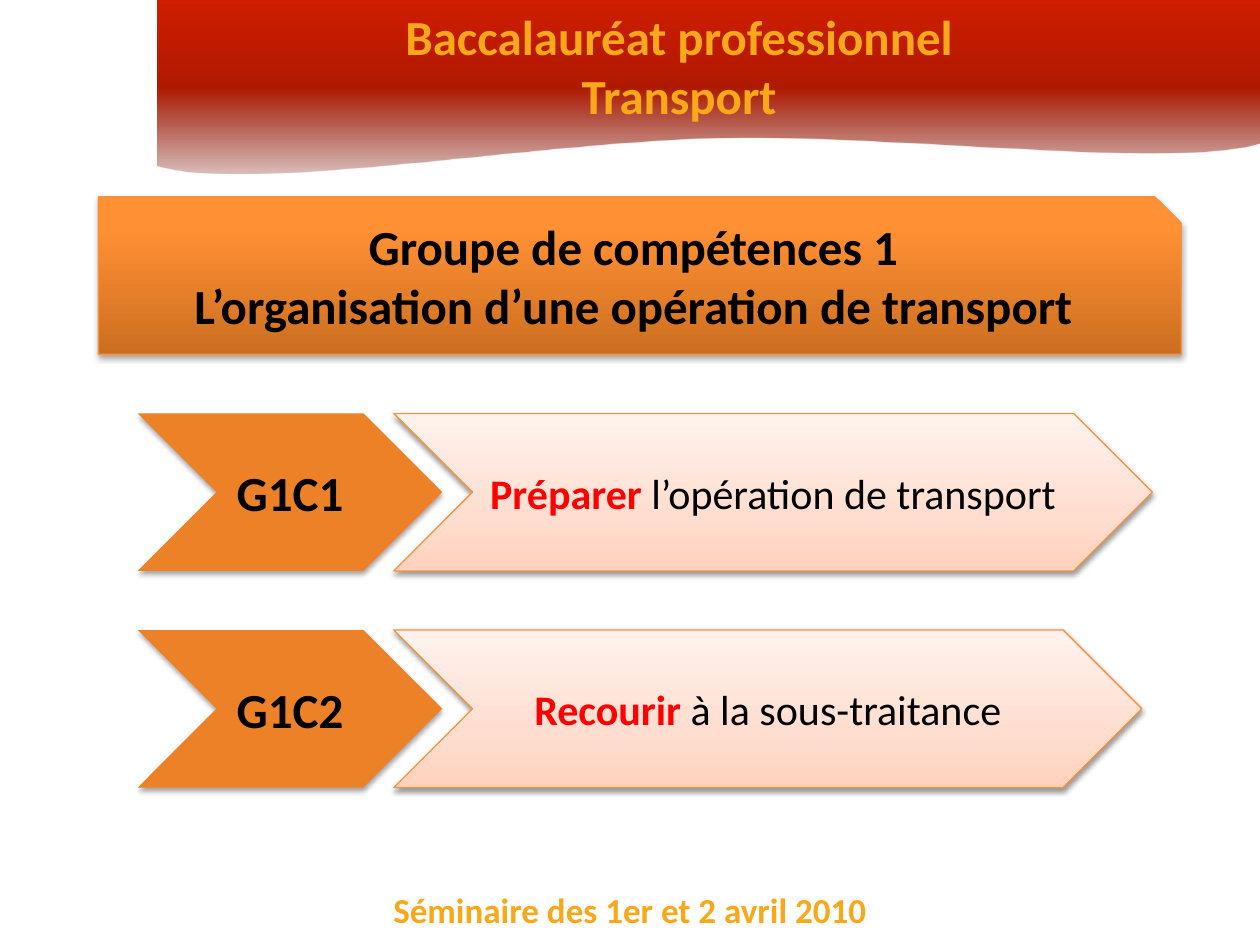
import pptx
import pptx.util
import pptx.dml.color
import pptx.enum.shapes
import pptx.enum.text
from lxml import etree

Pt = pptx.util.Pt
Shape = pptx.enum.shapes.MSO_SHAPE
Anchor = pptx.enum.text.MSO_ANCHOR
NAMESPACE = "http://schemas.openxmlformats.org/drawingml/2006/main"

# Content: each line is a list of (text, colour, bold) runs
GOLD, BLACK, RED, ORANGE, EDGE = "F8A818", "000000", "FF0000", "ED8127", "F69240"
HEADER = [[("Baccalauréat professionnel", GOLD, True)], [("Transport", GOLD, True)]]
FOOTER = [[("Séminaire des 1er et 2 avril 2010", GOLD, True)]]
BANNER = [
    [("Groupe de compétences 1", BLACK, True)],
    [("L’organisation d’une opération de transport", BLACK, True)],
]
SKILLS = [  # code, verb, rest of the sentence, arrow width
    ("G1C1", "Préparer", " l’opération de transport", 433.5),
    ("G1C2", "Recourir", " à la sous-traitance", 427.5),
]

# Gradients run from bottom to top: (position %, colour, opacity %)
WAVE_STOPS = [(0, "7B1100", 27), (50, "AF1900", 100), (100, "D01D00", 100)]
BANNER_STOPS = [(0, "CC6E20", 100), (80, "FF9034", 100), (100, "FF9136", 100)]
ARROW_STOPS = [(0, "FFD2BD", 100), (35, "FFDED0", 100), (100, "FFF2ED", 100)]

# Lower edge of the wave: start point, then Bézier segments
WAVE_START = (720, 81.5)
WAVE_CURVES = [
    ((669, 96.5), (515.5, 76.3), (410.5, 78.5)),
    ((305.5, 80.6), (143, 110.2), (90, 94.3)),
]


def colour(value):
    return pptx.dml.color.RGBColor.from_string(value)


def write(shape, lines, size, anchor):
    frame = shape.text_frame
    frame.word_wrap = True
    frame.auto_size = pptx.enum.text.MSO_AUTO_SIZE.NONE
    frame.vertical_anchor = anchor
    frame.text = "\n".join("" for _ in lines)
    for paragraph, runs in zip(frame.paragraphs, lines):
        paragraph.alignment = pptx.enum.text.PP_ALIGN.CENTER
        for text, run_colour, bold in runs:
            run = paragraph.add_run()
            run.text = text
            run.font.name = "Calibri"
            run.font.size = Pt(size)
            run.font.bold = bold
            run.font.color.rgb = colour(run_colour)


def add_gradient(shape, stops):
    shape.fill.background()
    properties = shape.fill._xPr
    stop_xml = "".join(
        f'<a:gs pos="{position * 1000}"><a:srgbClr val="{value}">'
        f'<a:alpha val="{opacity * 1000}"/></a:srgbClr></a:gs>'
        for position, value, opacity in stops
    )
    gradient = etree.fromstring(
        f'<a:gradFill xmlns:a="{NAMESPACE}" rotWithShape="1"><a:gsLst>{stop_xml}</a:gsLst>'
        '<a:lin ang="16200000" scaled="0"/></a:gradFill>'
    )
    properties.replace(properties.find(f"{{{NAMESPACE}}}noFill"), gradient)


def add_shadow(shape, opacity, distance):
    shape.shadow.inherit = False
    effects = shape._element.spPr.find(f"{{{NAMESPACE}}}effectLst")
    effects.append(etree.fromstring(
        f'<a:outerShdw xmlns:a="{NAMESPACE}" blurRad="{Pt(3.1)}" dist="{Pt(distance)}" '
        'dir="5400000" rotWithShape="0"><a:srgbClr val="000000">'
        f'<a:alpha val="{opacity * 1000}"/></a:srgbClr></a:outerShdw>'
    ))


def add_block(slide, kind, box, fill, lines, size, anchor, shadow):
    shape = slide.shapes.add_shape(kind, *map(Pt, box))
    if isinstance(fill, str):
        shape.fill.solid()
        shape.fill.fore_color.rgb = colour(fill)
        shape.line.fill.background()
    else:
        add_gradient(shape, fill)
        shape.line.color.rgb = colour(EDGE)
        shape.line.width = Pt(0.75)
    add_shadow(shape, *shadow)
    write(shape, lines, size, anchor)


def wave_points(steps=24):
    points, start = [WAVE_START], WAVE_START
    for first, second, end in WAVE_CURVES:
        for step in range(1, steps + 1):
            t = step / steps
            points.append(tuple(
                (1 - t) ** 3 * a + 3 * (1 - t) ** 2 * t * b + 3 * (1 - t) * t ** 2 * c + t ** 3 * d
                for a, b, c, d in zip(start, first, second, end)
            ))
        start = end
    return points


def main():
    presentation = pptx.Presentation()
    presentation.slide_width, presentation.slide_height = Pt(720), Pt(540)
    slide = presentation.slides.add_slide(presentation.slide_layouts[5])

    # Footer and red wave, placed behind the title
    footer = slide.shapes.add_textbox(Pt(180), Pt(504), Pt(360), Pt(31.5))
    write(footer, FOOTER, 20, Anchor.TOP)
    builder = slide.shapes.build_freeform(Pt(90), 0)
    outline = [(720, 0)] + wave_points()
    builder.add_line_segments([(Pt(x), Pt(y)) for x, y in outline], close=True)
    wave = builder.convert_to_shape()
    wave.shadow.inherit = False
    wave.line.fill.background()
    add_gradient(wave, WAVE_STOPS)

    # Title
    title = slide.shapes.title
    title.left, title.top, title.width, title.height = Pt(208), Pt(0), Pt(360), Pt(75)
    write(title, HEADER, 28, Anchor.TOP)
    wave._element.addnext(title._element)

    # Banner
    add_block(slide, Shape.SNIP_1_RECTANGLE, (56.25, 112.5, 618.75, 90), BANNER_STOPS,
              BANNER, 28, Anchor.TOP, (35, 1.8))

    # Skill rows: code chevron and description arrow
    for row, (code, verb, rest, width) in enumerate(SKILLS):
        top = 236.25 + row * 123.75
        add_block(slide, Shape.CHEVRON, (78.75, top, 174, 90), ORANGE,
                  [[(code, BLACK, True)]], 28, Anchor.MIDDLE, (35, 1.8))
        add_block(slide, Shape.CHEVRON, (225, top, width, 90), ARROW_STOPS,
                  [[(verb, RED, True), (rest, BLACK, False)]], 24, Anchor.MIDDLE, (38, 1.6))

    presentation.save("out.pptx")


if __name__ == "__main__":
    main()
